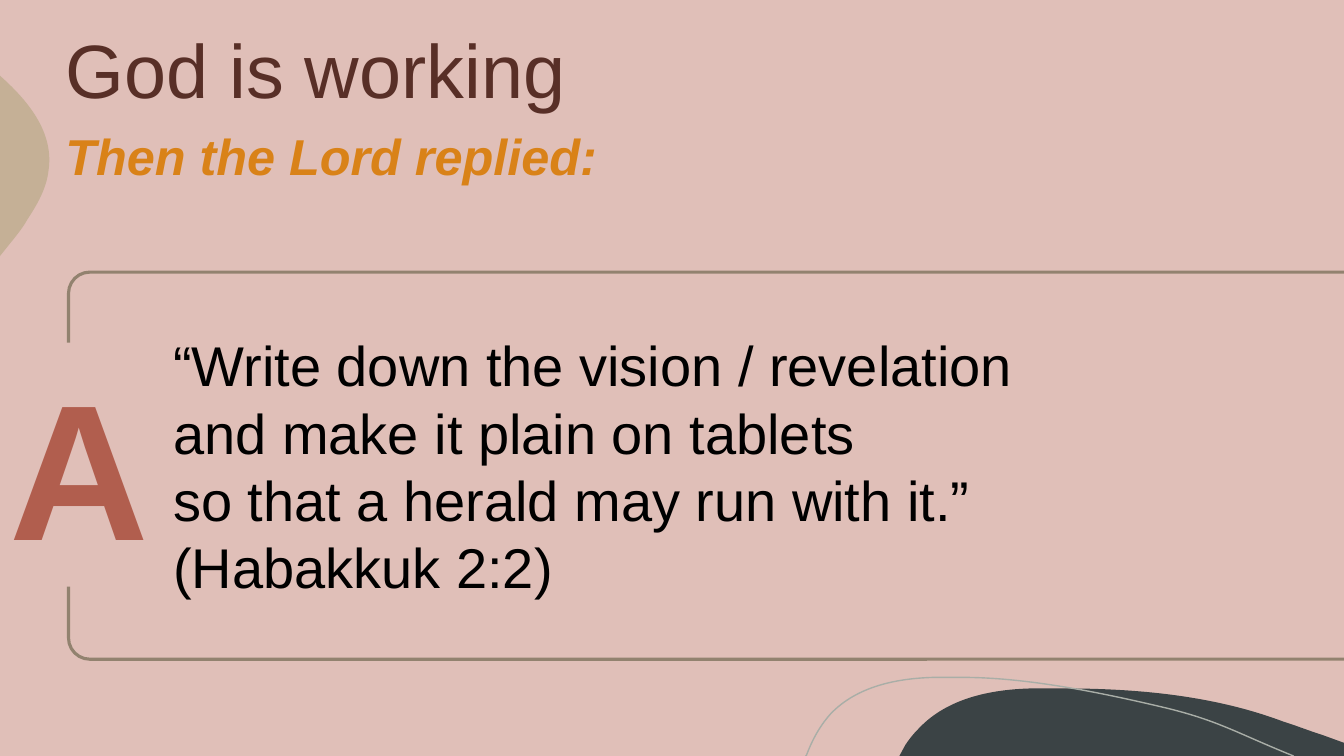
from lxml import etree
from pptx import Presentation
from pptx import util as u
from pptx.dml.color import RGBColor
from pptx.enum import shapes, text
from pptx.oxml import ns

Inches, Pt = u.Inches, u.Pt

ROSE = RGBColor(0xE0, 0xBF, 0xB8)
SLATE = RGBColor(0x3B, 0x43, 0x45)
SAND = RGBColor(0xC5, 0xB0, 0x96)
SAGE = RGBColor(0xA9, 0xAE, 0xA7)
TAUPE = RGBColor(0x92, 0x82, 0x6F)
BROWN = RGBColor(0x58, 0x2F, 0x27)
ORANGE = RGBColor(0xD9, 0x82, 0x18)
BRICK = RGBColor(0xB1, 0x5E, 0x4E)
BLACK = RGBColor(0, 0, 0)

# Outlines: a start point, then line ends (x, y) and Bezier triples (x1, y1, x2, y2, x, y)
HILL = [(10.54, 6.83), (11.28, 6.83, 12.04, 6.9, 12.73, 7.16),
        (12.86, 7.2, 12.98, 7.25, 13.11, 7.29), (13.33, 7.37), (13.33, 7.5),
        (8.92, 7.5), (8.98, 7.39), (9.02, 7.33, 9.06, 7.28, 9.11, 7.23),
        (9.39, 6.93, 9.82, 6.84, 10.23, 6.83), (10.33, 6.83, 10.43, 6.83, 10.54, 6.83)]
PEBBLE = [(0, 0.75), (0.01, 0.76), (0.3, 1.02, 0.54, 1.33, 0.48, 1.7),
          (0.46, 1.87, 0.37, 2.03, 0.27, 2.18), (0.24, 2.24, 0.17, 2.33, 0.08, 2.44),
          (0, 2.54)]
CONTOUR = [(7.99, 7.5), (8, 7.49), (8.06, 7.33, 8.14, 7.19, 8.24, 7.08),
           (8.5, 6.81, 8.89, 6.73, 9.26, 6.72), (9.55, 6.72),
           (10.22, 6.72, 11, 6.89, 11.55, 7.02), (12.09, 7.15, 12.26, 7.27, 12.83, 7.5)]

VERSE = ["“Write down the vision / revelation",
         "and make it plain on tablets",
         "so that a herald may run with it.”",
         "(Habakkuk 2:2)"]


def paint(shape, fill=None, line=None, width=1):
    shape.shadow.inherit = False
    if fill is None:
        shape.fill.background()
    else:
        shape.fill.solid()
        shape.fill.fore_color.rgb = fill
    if line is None:
        shape.line.fill.background()
    else:
        shape.line.color.rgb = line
        shape.line.width = Pt(width)


def add_outline(slide, outline, closed, **colours):
    start, *ends = [(Inches(step[-2]), Inches(step[-1])) for step in outline]
    builder = slide.shapes.build_freeform(*start)
    builder.add_line_segments(ends, close=closed)
    shape = builder.convert_to_shape()
    paint(shape, **colours)
    # Bend the segments that have control points
    segments = list(shape._element.iter(ns.qn("a:lnTo")))
    for segment, step in zip(segments, outline[1:]):
        if len(step) == 6:
            segment.clear()
            for x, y in zip(step[::2], step[1::2]):
                etree.SubElement(segment, ns.qn("a:pt"), x=str(Inches(x) - shape.left),
                                 y=str(Inches(y) - shape.top))
            segment.tag = ns.qn("a:cubicBezTo")


def write(shape, lines, size, colour, spacing=1.0, indent=0,
          anchor=text.MSO_ANCHOR.TOP, wrap=True, **style):
    frame = shape.text_frame
    layout = {"word_wrap": wrap, "auto_size": text.MSO_AUTO_SIZE.NONE,
              "vertical_anchor": anchor}
    for name, value in layout.items():
        setattr(frame, name, value)
    frame.text = "\n".join(lines)
    for paragraph in frame.paragraphs:
        paragraph.alignment = text.PP_ALIGN.LEFT
        paragraph.line_spacing = spacing
        if indent:
            properties = paragraph._p.get_or_add_pPr()
            properties.set("marL", str(Inches(indent)))
            properties.set("indent", "0")
        font = paragraph.runs[0].font
        font.color.rgb = colour
        for name, value in {"name": "Arial", "size": Pt(size), **style}.items():
            setattr(font, name, value)


def box(left, top, width, height):
    return [Inches(length) for length in (left, top, width, height)]


def main():
    deck = Presentation()
    deck.slide_width, deck.slide_height = Inches(13.33), Inches(7.5)
    slide = deck.slides.add_slide(deck.slide_layouts[5])
    slide.background.fill.solid()
    slide.background.fill.fore_color.rgb = ROSE
    middle = text.MSO_ANCHOR.MIDDLE

    # Background decoration
    add_outline(slide, HILL, True, fill=SLATE)
    add_outline(slide, PEBBLE, True, fill=SAND)
    add_outline(slide, CONTOUR, False, line=SAGE)

    # Title, brought in front of the decoration, and subtitle
    title = slide.shapes.title
    title.left, title.top, title.width, title.height = box(0.55, 0.29, 12.56, 0.89)
    write(title, ["God is working"], 54, BROWN, spacing=0.9, anchor=middle)
    slide.shapes._spTree.append(title._element)
    subtitle = slide.shapes.add_textbox(*box(0.55, 1.19, 12.56, 0.71))
    write(subtitle, ["Then the Lord replied:"], 36, ORANGE, bold=True, italic=True)

    # Answer frame, interrupted by the big letter
    frame = slide.shapes.add_shape(shapes.MSO_SHAPE.ROUNDED_RECTANGLE,
                                   *box(0.68, 2.7, 13.07, 3.84))
    frame.adjustments[0] = 0.055
    paint(frame, line=TAUPE, width=2.25)
    letter = slide.shapes.add_shape(shapes.MSO_SHAPE.RECTANGLE, *box(0, 3.4, 1.6, 2.42))
    paint(letter, fill=ROSE)
    write(letter, ["A"], 138, BRICK, wrap=False, bold=True)

    # Verse
    verse = slide.shapes.add_textbox(*box(1.6, 3.22, 11.73, 2.79))
    write(verse, VERSE, 40, BLACK, indent=0.02, anchor=middle)

    deck.save("out.pptx")


if __name__ == "__main__":
    main()
